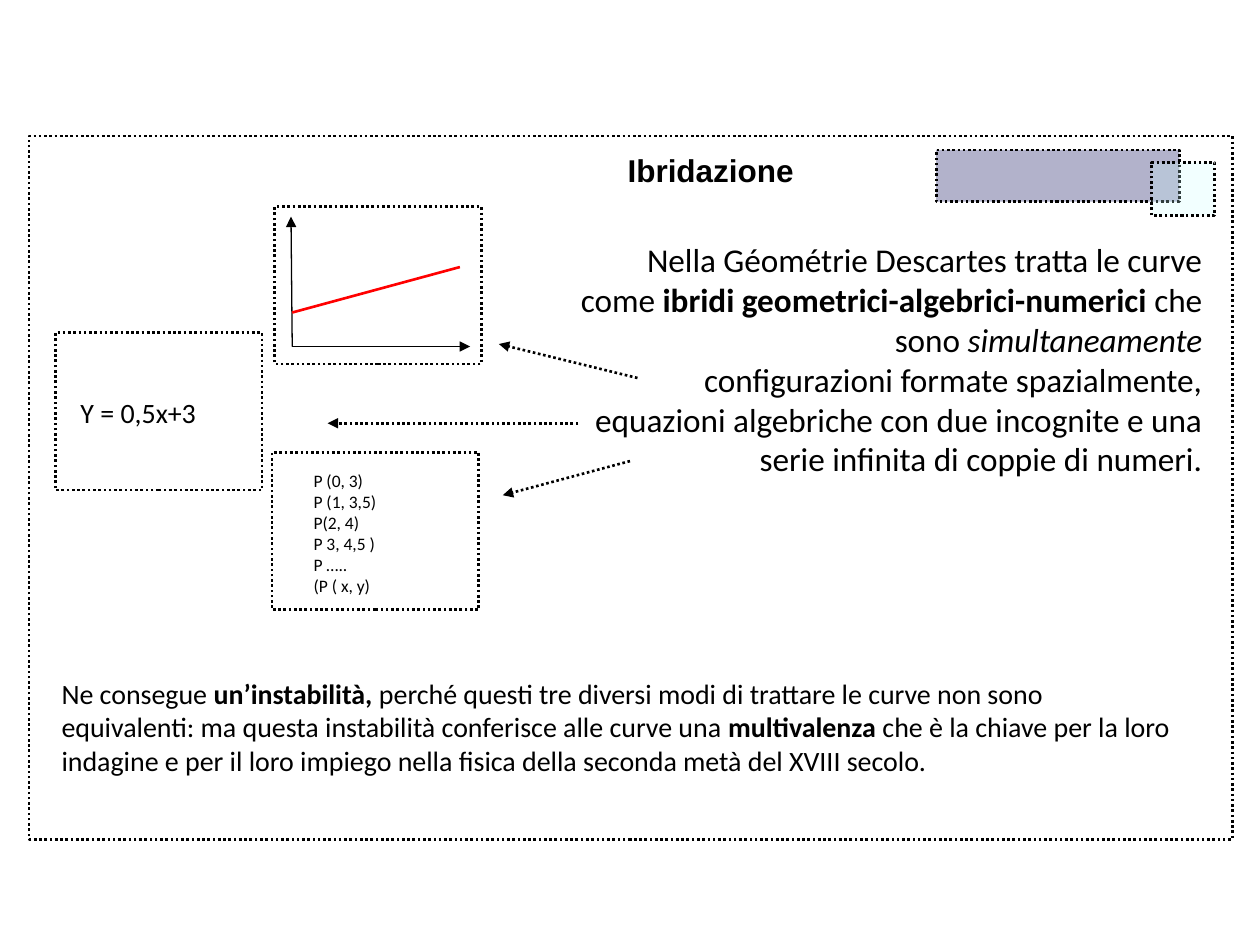
from lxml.etree import SubElement
from pptx import Presentation
from pptx.dml.color import RGBColor
from pptx.enum.dml import MSO_LINE
from pptx.enum.shapes import MSO_CONNECTOR, MSO_SHAPE
from pptx.enum.text import MSO_ANCHOR, MSO_AUTO_SIZE, PP_ALIGN
from pptx.oxml.ns import qn
from pptx.util import Pt

BLACK = "000000"
CARD_SIZE = (118.1, 90)


def color(hex_string):
    return RGBColor.from_string(hex_string)


class HybridSlide:
    font = "Calibri"
    title_font = "Arial"
    thick = 1.5
    thin = 0.75

    def __init__(self, presentation):
        self.slide = presentation.slides.add_slide(presentation.slide_layouts[5])
        self.shapes = self.slide.shapes

    def group(self):
        return self.shapes.add_group_shape().shapes

    def stroke(self, line, hex_string, width, dotted):
        line.color.rgb = color(hex_string)
        line.width = Pt(width)
        if dotted:
            line.dash_style = MSO_LINE.ROUND_DOT

    def style(self, run, size, font, bold=False, italic=False):
        run.font.size = Pt(size)
        run.font.name = font
        run.font.bold = bold
        run.font.italic = italic
        run.font.color.rgb = color(BLACK)

    def title(self, text, left, top, width, height):
        heading = self.shapes.title
        heading.left, heading.top = Pt(left), Pt(top)
        heading.width, heading.height = Pt(width), Pt(height)
        frame = heading.text_frame
        frame.text = text
        frame.word_wrap = True
        frame.auto_size = MSO_AUTO_SIZE.NONE
        frame.vertical_anchor = MSO_ANCHOR.TOP
        frame.paragraphs[0].alignment = PP_ALIGN.LEFT
        self.style(frame.paragraphs[0].runs[0], 18, self.title_font, bold=True)
        heading.element.getparent().append(heading.element)

    def box(self, left, top, width, height, fill=None, opacity=100, layer=None):
        rectangle = (layer or self.shapes).add_shape(
            MSO_SHAPE.RECTANGLE, Pt(left), Pt(top), Pt(width), Pt(height))
        rectangle.shadow.inherit = False
        self.stroke(rectangle.line, BLACK, self.thick, True)
        if fill is None:
            rectangle.fill.background()
            return
        rectangle.fill.solid()
        rectangle.fill.fore_color.rgb = color(fill)
        fill_color = rectangle.element.spPr.find(qn("a:solidFill"))[0]
        SubElement(fill_color, qn("a:alpha"), val=str(opacity * 1000))

    def text(self, paragraphs, left, top, width, height, size,
             align=PP_ALIGN.LEFT, wrap=True, layer=None):
        frame = (layer or self.shapes).add_textbox(
            Pt(left), Pt(top), Pt(width), Pt(height)).text_frame
        frame.word_wrap = wrap
        for index, pieces in enumerate(paragraphs):
            paragraph = frame.add_paragraph() if index else frame.paragraphs[0]
            paragraph.alignment = align
            for words, emphasis in pieces:
                run = paragraph.add_run()
                run.text = words
                self.style(run, size, self.font, emphasis == "b", emphasis == "i")

    def line(self, start, end, hex_string=BLACK, width=thick, dotted=False,
             arrow=True, layer=None):
        connector = (layer or self.shapes).add_connector(
            MSO_CONNECTOR.STRAIGHT, *map(Pt, start + end))
        self.stroke(connector.line, hex_string, width, dotted)
        if arrow:
            SubElement(connector.line._get_or_add_ln(), qn("a:tailEnd"), type="triangle")
        SubElement(connector.element.spPr, qn("a:effectLst"))


def main():
    presentation = Presentation()
    presentation.slide_width, presentation.slide_height = Pt(720), Pt(540)
    page = HybridSlide(presentation)

    page.box(16.6, 77.8, 687.6, 401.8, "FFFFFF", 70)
    page.title("Ibridazione", 351.4, 82.8, 303.8, 36)
    page.text([
        [("Nella Géométrie Descartes tratta le curve come ", ""),
         ("ibridi geometrici-algebrici-numerici", "b"),
         (" che sono ", ""),
         ("simultaneamente", "i")],
        [(" configurazioni formate spazialmente, equazioni algebriche con due "
          "incognite e una serie infinita di coppie di numeri.", "")],
    ], 319.7, 133.2, 374.4, 166.3, 19, align=PP_ALIGN.RIGHT)
    page.box(535, 85.7, 139, 29.5, "666699", 50)
    page.box(658.1, 92.9, 36, 30.2, "CCFFFF", 24)

    graph = page.group()
    origin = (167, 198)
    page.box(157, 118.1, *CARD_SIZE, layer=graph)
    for axis_end in ((268.6, 198), (166.3, 123.8)):
        page.line(origin, axis_end, width=page.thin, layer=graph)
    page.line((167, 178.6), (262.8, 152.6), "FF0000", arrow=False, layer=graph)

    equation = page.group()
    page.box(31.7, 190.1, *CARD_SIZE, layer=equation)
    page.text([[("Y = 0,5x+3", "")]], 38.9, 222.5, 107.3, 26.6, 16,
              wrap=False, layer=equation)

    pairs = page.group()
    page.box(155.5, 258.5, *CARD_SIZE, layer=pairs)
    points = ("P (0, 3)", "P (1, 3,5)", "P(2, 4)", "P 3, 4,5 )", "P …..", "(P ( x, y)")
    page.text([[(point, "")] for point in points], 172.1, 265, 63.4, 79.2, 10,
              wrap=False, layer=pairs)

    page.text([
        [("Ne consegue ", ""),
         ("un’instabilità,", "b"),
         (" perché questi tre diversi modi di trattare le curve non sono "
          "equivalenti: ma questa instabilità conferisce alle curve una ", ""),
         ("multivalenza ", "b"),
         ("che è la chiave per la loro indagine e per il loro impiego nella "
          "fisica della seconda metà del XVIII secolo.", "")],
    ], 28.1, 383, 652.3, 84.2, 16)

    for start, end in (((364.3, 216), (285.1, 196.6)),
                       ((330.5, 241.9), (187.2, 241.9)),
                       ((360, 263.5), (287.3, 283))):
        page.line(start, end, dotted=True)

    presentation.save("out.pptx")


if __name__ == "__main__":
    main()
